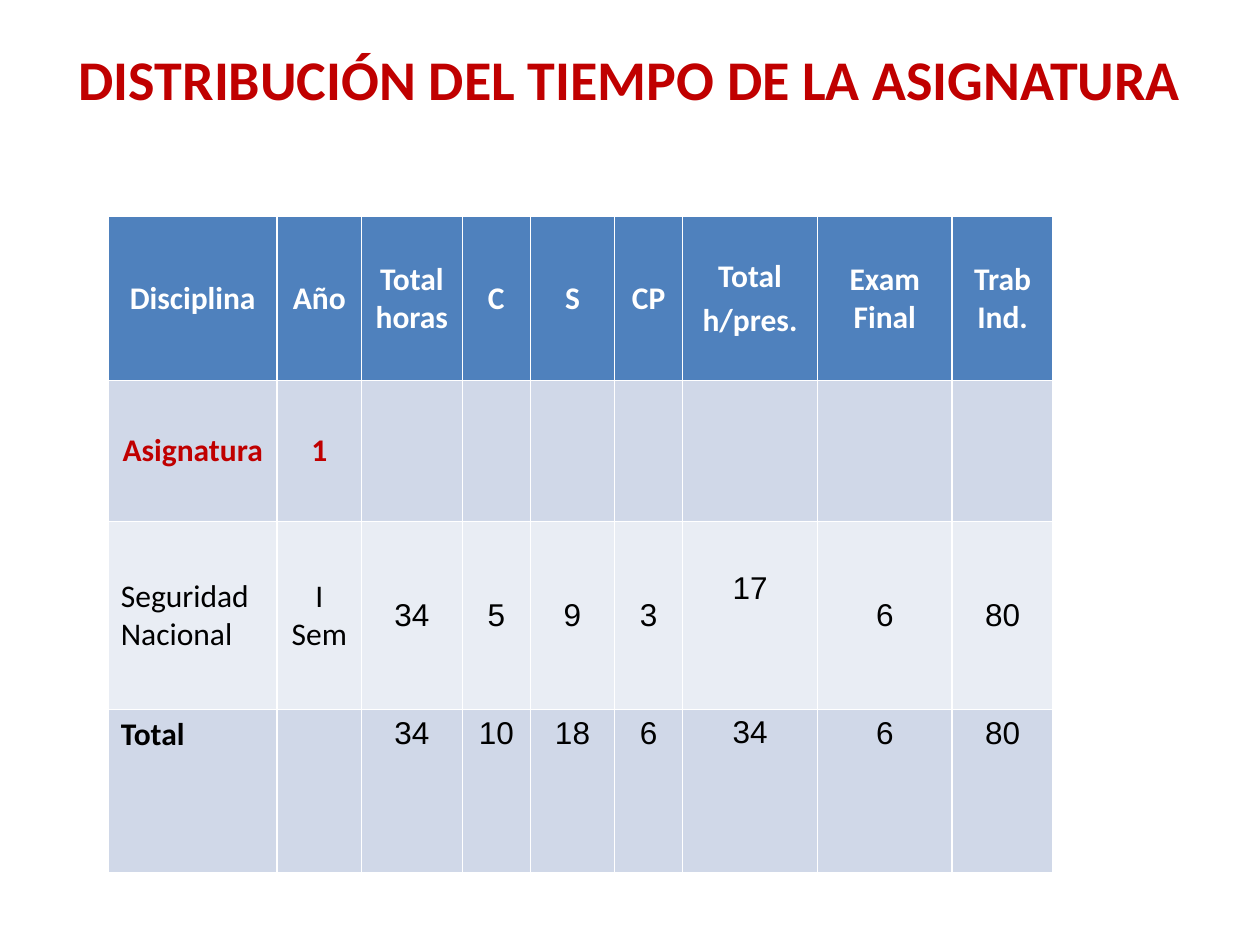
from pptx import Presentation
from pptx.dml.color import RGBColor
from pptx.enum.text import MSO_ANCHOR, PP_ALIGN
from pptx.util import Inches, Pt

COLORS = {
    "accent": "C00000",
    "header": "4F81BD",
    "band_dark": "D0D8E8",
    "band_light": "E9EDF4",
    "white": "FFFFFF",
    "black": "000000",
}
COLUMN_WIDTHS = [1.34, 0.67, 0.8, 0.54, 0.67, 0.54, 1.07, 1.07, 0.8]
CLASS_HOURS_COLUMN = 6

# Each row: height, fill, font colour, bold, anchor, cell texts
ROWS = [
    (1.3, "header", "white", True, MSO_ANCHOR.MIDDLE,
     ["Disciplina", "Año", "Total\nhoras", "C", "S", "CP",
      "Total\nh/pres.", "Exam\nFinal", "Trab\nInd."]),
    (1.12, "band_dark", "accent", True, MSO_ANCHOR.MIDDLE,
     ["Asignatura", "1"] + [""] * 7),
    (1.49, "band_light", "black", False, MSO_ANCHOR.MIDDLE,
     ["Seguridad\nNacional", "I\nSem", "34", "5", "9", "3", "17", "6", "80"]),
    (1.3, "band_dark", "black", False, MSO_ANCHOR.TOP,
     ["Total", "", "34", "10", "18", "6", "34", "6", "80"]),
]


def set_attributes(target, values):
    for name, value in values.items():
        setattr(target, name, value)


def format_font(font, size, color, bold, name="Calibri"):
    set_attributes(font, {"size": Pt(size), "bold": bold, "name": name})
    font.color.rgb = RGBColor.from_string(COLORS[color])


def add_title(slide, left, top, width, height, text):
    title = slide.shapes.title
    set_attributes(title, {"left": left, "top": top, "width": width, "height": height})
    frame = title.text_frame
    set_attributes(frame, {"text": text, "vertical_anchor": MSO_ANCHOR.TOP, "word_wrap": True})
    paragraph = frame.paragraphs[0]
    paragraph.alignment = PP_ALIGN.CENTER
    format_font(paragraph.runs[0].font, 32, "accent", True)


def format_class_hours(cell, row_index):
    """Apply the tighter margins and looser lines of the class hours column."""
    set_attributes(cell, {
        "margin_left": Inches(0.07),
        "margin_right": Inches(0.07),
        "margin_top": 0,
        "margin_bottom": 0,
    })
    paragraph = cell.text_frame.paragraphs[-1]
    paragraph.line_spacing = 1.15
    if row_index == 0:
        paragraph.space_after = Pt(10)
    else:
        set_attributes(paragraph, {"space_before": Pt(3), "space_after": Pt(2)})
    if row_index == 2:
        set_attributes(cell, {"margin_top": Inches(0.35), "vertical_anchor": MSO_ANCHOR.TOP})


def fill_row(table, row_index, row):
    height, fill, color, bold, anchor, texts = row
    table.rows[row_index].height = Inches(height)
    for column_index, text in enumerate(texts):
        cell = table.cell(row_index, column_index)
        set_attributes(cell, {"text": text, "vertical_anchor": anchor})
        cell.fill.solid()
        cell.fill.fore_color.rgb = RGBColor.from_string(COLORS[fill])
        is_label = column_index == 0 and row_index >= 2
        is_number = column_index >= 2 and row_index >= 2
        for paragraph in cell.text_frame.paragraphs:
            paragraph.alignment = PP_ALIGN.LEFT if is_label else PP_ALIGN.CENTER
            for run in paragraph.runs:
                format_font(run.font, 18, color, bold or text == "Total",
                            "Arial" if is_number else "Calibri")
        if column_index == CLASS_HOURS_COLUMN and text:
            format_class_hours(cell, row_index)


def add_hours_table(slide, left, top, width, height):
    table = slide.shapes.add_table(
        len(ROWS), len(COLUMN_WIDTHS), left, top, width, height).table
    for column, share in zip(table.columns, COLUMN_WIDTHS):
        column.width = int(width * share / sum(COLUMN_WIDTHS))
    for row_index, row in enumerate(ROWS):
        fill_row(table, row_index, row)


def main():
    presentation = Presentation()
    presentation.slide_width = Inches(10)
    presentation.slide_height = Inches(7.5)
    slide = presentation.slides.add_slide(presentation.slide_layouts[5])
    add_title(slide, Inches(0.5), Inches(0.3), Inches(9), Inches(1.18),
              "DISTRIBUCIÓN DEL TIEMPO DE LA ASIGNATURA")
    add_hours_table(slide, Inches(0.86), Inches(1.72), Inches(7.5),
                    Inches(sum(row[0] for row in ROWS)))
    presentation.save("out.pptx")


if __name__ == "__main__":
    main()
